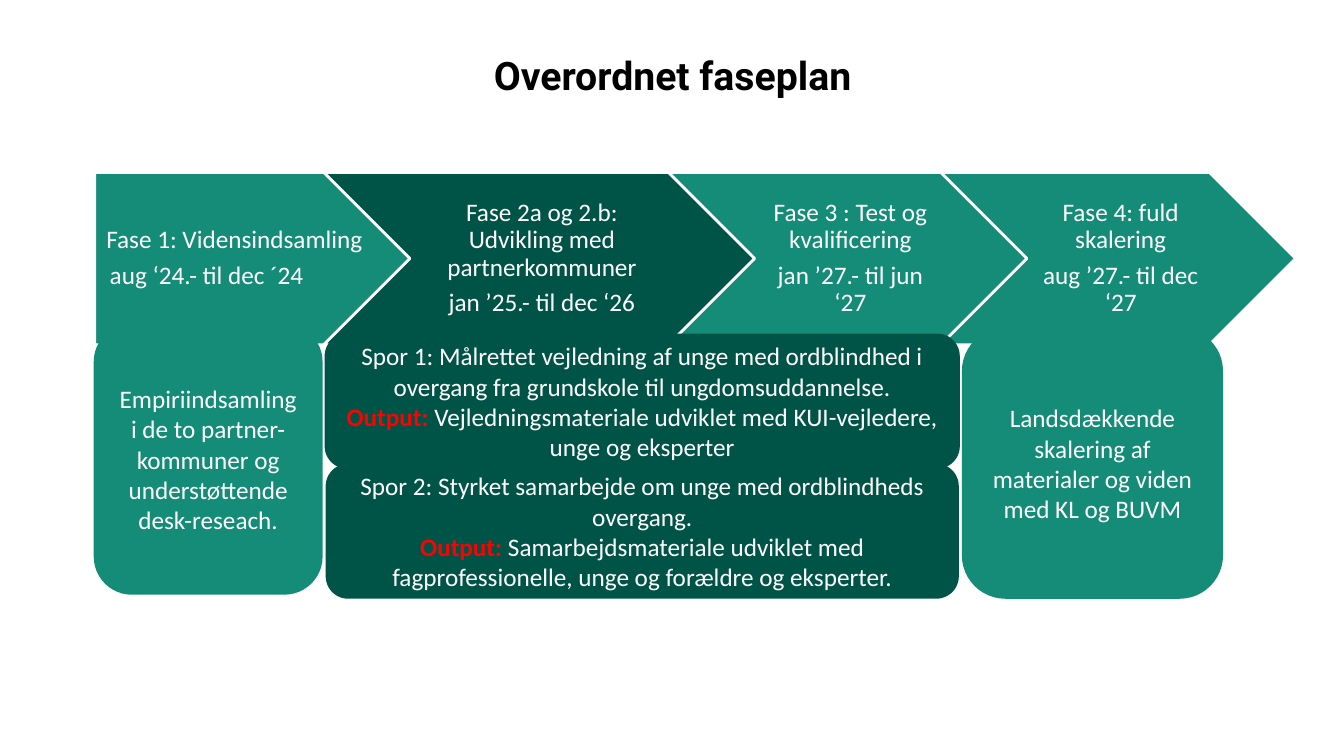
"""Build the slide with the overall phase plan."""
from dataclasses import dataclass

from pptx import Presentation
from pptx.dml.color import RGBColor
from pptx.enum.shapes import MSO_SHAPE
from pptx.enum.text import MSO_ANCHOR, MSO_AUTO_SIZE, PP_ALIGN
from pptx.util import Pt

EMU_PER_PX = 9144
TITLE_ONLY = 5
PENTAGON, CHEVRON = MSO_SHAPE.PENTAGON, MSO_SHAPE.CHEVRON
ROUNDED = MSO_SHAPE.ROUNDED_RECTANGLE
TOP, MIDDLE = MSO_ANCHOR.TOP, MSO_ANCHOR.MIDDLE
LEFT, CENTER = PP_ALIGN.LEFT, PP_ALIGN.CENTER
NO_AUTOFIT = MSO_AUTO_SIZE.NONE


@dataclass(frozen=True)
class Theme:
    """Colours, fonts and type sizes."""
    light: str = "148C78"
    dark: str = "005447"
    white: str = "FFFFFF"
    black: str = "000000"
    accent: str = "FF0000"
    title_font: str = "Roboto"
    body_font: str = "Calibri"
    title_size: int = 28
    body_size: int = 18


def px(length):
    """Turn px into EMU."""
    return length * EMU_PER_PX


def assign(target, values):
    """Set each named attribute on the target."""
    for name, value in values.items():
        setattr(target, name, value)


class PhasePlan:
    """Draw the elements of the plan on one slide."""

    def __init__(self, slide, theme):
        self.slide = slide
        self.theme = theme

    def frame(self, text_frame, insets, anchor):
        """Set wrapping, anchor and insets of a text frame."""
        sides = ("margin_left", "margin_top", "margin_right", "margin_bottom")
        assign(text_frame, dict(zip(sides, map(px, insets))))
        assign(text_frame, {"word_wrap": True, "auto_size": NO_AUTOFIT, "vertical_anchor": anchor})

    def run(self, paragraph, text, color, bold=False):
        """Add a run of body text."""
        run = paragraph.add_run()
        run.text = text
        assign(run.font, {"name": self.theme.body_font, "size": Pt(self.theme.body_size), "bold": bold})
        run.font.color.rgb = RGBColor.from_string(color)

    def title(self, text, box):
        """Place and format the title placeholder."""
        title = self.slide.shapes.title
        assign(title, dict(zip(("left", "top", "width", "height"), map(px, box))))
        self.frame(title.text_frame, (0, 0, 0, 0), TOP)
        title.text_frame.text = text
        heading = title.text_frame.paragraphs[0]
        assign(heading, {"alignment": CENTER, "line_spacing": 0.9})
        assign(heading.font, {"name": self.theme.title_font, "size": Pt(self.theme.title_size), "bold": True})
        heading.font.color.rgb = RGBColor.from_string(self.theme.black)

    def block(self, kind, box, fill):
        """Add a filled shape without line or shadow."""
        block = self.slide.shapes.add_shape(kind, *map(px, box))
        block.shadow.inherit = False
        block.fill.solid()
        block.fill.fore_color.rgb = RGBColor.from_string(fill)
        block.line.fill.background()
        return block

    def phase(self, kind, box, fill, name, period, left_inset, period_indent):
        """Add an arrow with the name and the period of a phase."""
        arrow = self.block(kind, box, fill)
        arrow.line.color.rgb = RGBColor.from_string(self.theme.white)
        arrow.line.width = Pt(2)
        self.frame(arrow.text_frame, (left_inset, 5, 3, 5), MIDDLE)
        heading = arrow.text_frame.paragraphs[0]
        dates = arrow.text_frame.add_paragraph()
        for paragraph, text in ((heading, name), (dates, period)):
            assign(paragraph, {"alignment": CENTER, "line_spacing": 0.9, "space_after": Pt(6)})
            self.run(paragraph, text, self.theme.white)
        if period_indent:
            dates.alignment = LEFT
            dates._p.get_or_add_pPr().set("marL", str(px(period_indent)))

    def activity(self, box, fill, text, output=None):
        """Add a rounded box with a text and, if given, its output."""
        panel = self.block(ROUNDED, box, fill)
        self.frame(panel.text_frame, (10, 5, 10, 5), MIDDLE)
        summary = panel.text_frame.paragraphs[0]
        summary.alignment = CENTER
        self.run(summary, text, self.theme.white)
        if output:
            result = panel.text_frame.add_paragraph()
            result.alignment = CENTER
            self.run(result, "Output:", self.theme.accent, bold=True)
            self.run(result, f" {output}", self.theme.white)


def main():
    """Build and save the slide."""
    deck = Presentation()
    assign(deck, {"slide_width": px(1333), "slide_height": px(750)})
    theme = Theme()
    plan = PhasePlan(deck.slides.add_slide(deck.slide_layouts[TITLE_ONLY]), theme)
    plan.title("Overordnet faseplan", (121, 56, 1092, 88))

    phases = (
        (PENTAGON, 313, theme.light, "Fase 1: Vidensindsamling", "aug ‘24.- til dec ´24", 10, 5),
        (CHEVRON, 428, theme.dark, "Fase 2a og 2.b: Udvikling med partnerkommuner",
         "jan ’25.- til dec ‘26", 8, 0),
        (CHEVRON, 356, theme.light, "Fase 3 : Test og kvalificering", "jan ’27.- til jun ‘27", 8, 0),
        (CHEVRON, 352, theme.light, "Fase 4: fuld skalering", "aug ’27.- til dec ‘27", 8, 0),
    )
    phase_left, overlap = 94, 86
    for kind, width, fill, name, period, inset, indent in phases:
        plan.phase(kind, (phase_left, 171, width, 171), fill, name, period, inset, indent)
        phase_left += width - overlap

    activities = (
        ((93, 321, 227, 269), theme.light,
         "Empiriindsamling i de to partner-kommuner og understøttende desk-reseach.", None),
        ((323, 460, 628, 134), theme.dark,
         "Spor 2: Styrket samarbejde om unge med ordblindheds overgang.",
         "Samarbejdsmateriale udviklet med fagprofessionelle, unge og forældre og eksperter."),
        ((322, 331, 630, 134), theme.dark,
         "Spor 1: Målrettet vejledning af unge med ordblindhed i overgang fra grundskole"
         " til ungdomsuddannelse.",
         "Vejledningsmateriale udviklet med KUI-vejledere, unge og eksperter"),
        ((954, 325, 259, 269), theme.light,
         "Landsdækkende skalering af materialer og viden med KL og BUVM", None),
    )
    for box, fill, text, output in activities:
        plan.activity(box, fill, text, output)

    deck.save("out.pptx")


if __name__ == "__main__":
    main()
